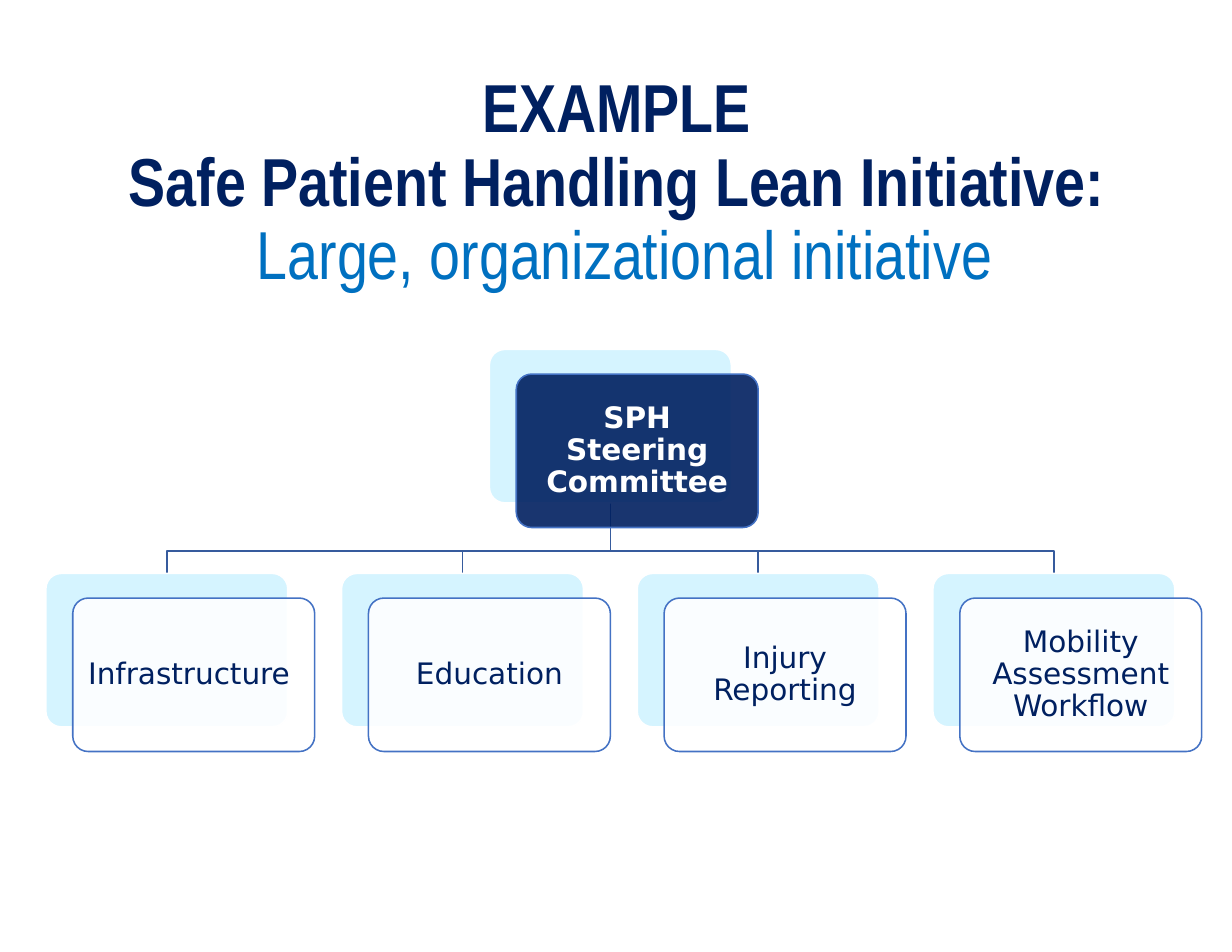
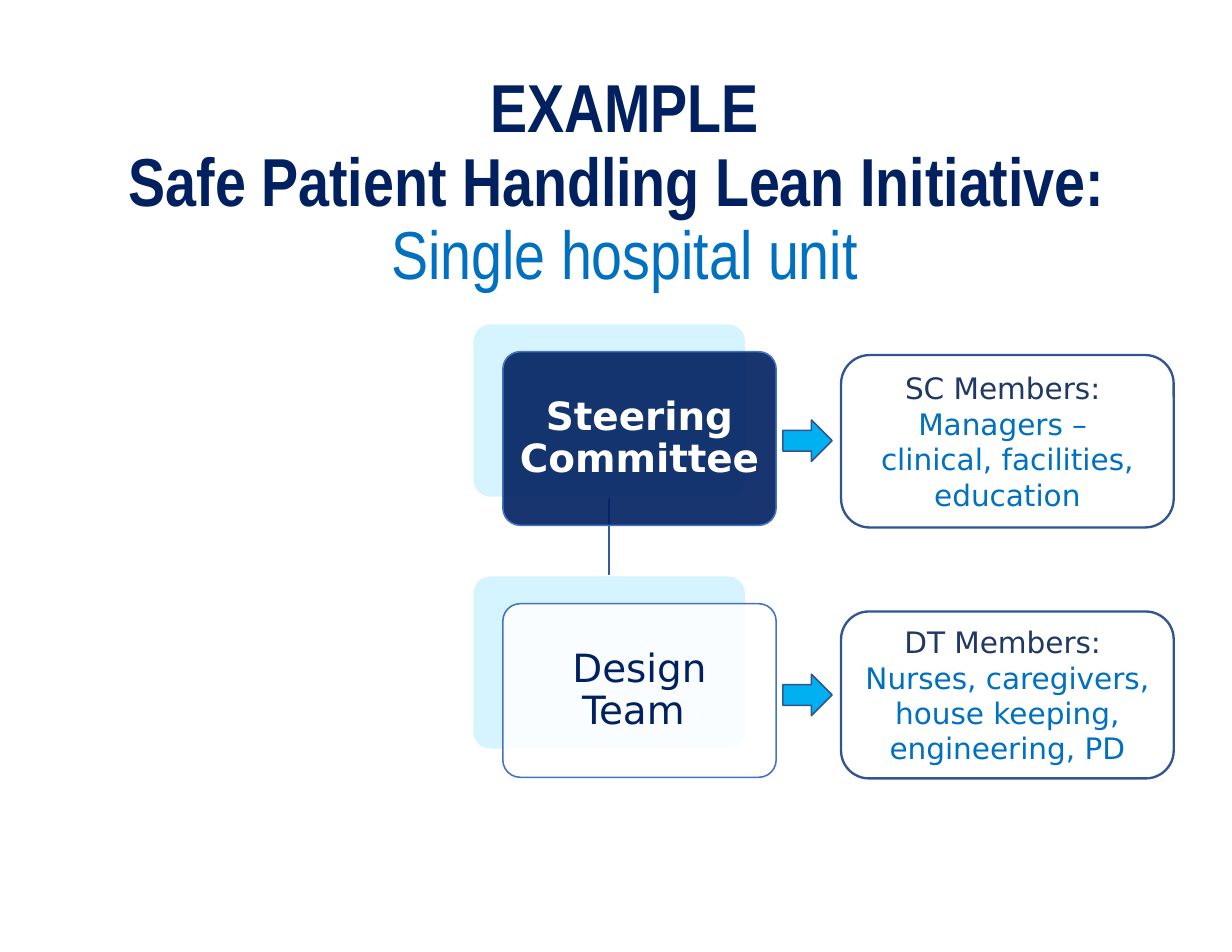
from copy import deepcopy

from lxml import etree
from pptx import Presentation
from pptx.dml.color import RGBColor
from pptx.enum.shapes import MSO_CONNECTOR, MSO_SHAPE
from pptx.enum.text import MSO_ANCHOR, MSO_AUTO_SIZE, PP_ALIGN
from pptx.oxml.ns import qn
from pptx.util import Inches, Pt

NAVY = RGBColor(0x00, 0x20, 0x60)
BLUE = RGBColor(0x00, 0x70, 0xC0)
SLATE = RGBColor(0x20, 0x38, 0x64)
PALE = RGBColor(0xD5, 0xF4, 0xFF)
SKY = RGBColor(0x00, 0xB0, 0xF0)
WHITE = RGBColor(0xFF, 0xFF, 0xFF)
CARD_EDGE = RGBColor(0x44, 0x72, 0xC4)
LINK = RGBColor(0x36, 0x5B, 0x9D)
OUTLINE = RGBColor(0x32, 0x54, 0x91)

TITLE_FONT = "Arial Narrow"
CHART_FONT = "DejaVu Sans"


def write(paragraph, text, size=19, color=NAVY, bold=False, font=CHART_FONT):
    """Add text to a paragraph; each newline becomes a line break of the same format."""
    run = None
    for index, line in enumerate(text.split("\n")):
        if index:
            paragraph.add_line_break()
            line_break = paragraph._p.findall(qn("a:br"))[-1]
            line_break.insert(0, deepcopy(run.font._element if hasattr(run.font, "_element")
                                          else run._r.find(qn("a:rPr"))))
        if line:
            run = paragraph.add_run()
            run.text = line
            run.font.size, run.font.bold, run.font.name = Pt(size), bold, font
            run.font.color.rgb = color


class OrgChart:
    """Holds the deck, the current slide and the style of its elements."""

    def __init__(self):
        self.deck = Presentation()
        self.deck.slide_width, self.deck.slide_height = Inches(11), Inches(8.5)
        self.slide = None

    def new_slide(self, heading, scope):
        self.slide = self.deck.slides.add_slide(self.deck.slide_layouts[5])
        title = self.slide.shapes.title
        title.left, title.top = Inches(0.83), Inches(0.68)
        title.width, title.height = Inches(9.49), Inches(1.93)
        frame = title.text_frame
        frame.auto_size = MSO_AUTO_SIZE.NONE
        frame.vertical_anchor = MSO_ANCHOR.MIDDLE
        paragraph = frame.paragraphs[0]
        paragraph.alignment, paragraph.line_spacing = PP_ALIGN.CENTER, 0.9
        write(paragraph, heading, size=43.6, bold=True, font=TITLE_FONT)
        write(paragraph, scope, size=43.6, color=BLUE, font=TITLE_FONT)

    def block(self, kind, left, top, width, height, fill=None, line=OUTLINE, weight=1):
        shape = self.slide.shapes.add_shape(
            kind, Inches(left), Inches(top), Inches(width), Inches(height))
        shape.shadow.inherit = False
        if fill is None:
            shape.fill.background()
        else:
            shape.fill.solid()
            shape.fill.fore_color.rgb = fill
        shape.line.color.rgb = line
        shape.line.width = Pt(weight)
        return shape

    def card(self, text, left, top, width, height, offset, size, inset, lead=False):
        """Draw a translucent card over a pale backing, and return the backing."""
        rounded = MSO_SHAPE.ROUNDED_RECTANGLE
        backing = self.block(rounded, left, top, width, height, PALE, WHITE)
        front = self.block(rounded, left + offset[0], top + offset[1], width, height,
                           NAVY if lead else WHITE, CARD_EDGE)
        backing.adjustments[0] = front.adjustments[0] = 0.1
        color = front.element.spPr.find(qn("a:solidFill"))[0]
        etree.SubElement(color, qn("a:alpha"), val="90000")
        frame = front.text_frame
        frame.word_wrap = True
        frame.vertical_anchor = MSO_ANCHOR.MIDDLE
        frame.margin_left = frame.margin_right = Inches(inset)
        frame.margin_top = frame.margin_bottom = Inches(inset)
        paragraph = frame.paragraphs[0]
        paragraph.alignment, paragraph.line_spacing = PP_ALIGN.CENTER, 0.9
        write(paragraph, text, size=size, color=WHITE if lead else NAVY, bold=lead)
        return backing

    def link(self, parent, child):
        """Join two backings by a line that runs behind the cards."""
        start_x = parent.left + parent.width // 2
        end_x = child.left + child.width // 2
        start_y = parent.top + parent.height
        if start_x == end_x:
            line = self.slide.shapes.add_connector(
                MSO_CONNECTOR.STRAIGHT, start_x, start_y, end_x, child.top)
            line.begin_connect(parent, 2)
            line.end_connect(child, 0)
            etree.SubElement(line.element.spPr, qn("a:effectLst"))
        else:
            fork_y = child.top - Inches(0.2)
            builder = self.slide.shapes.build_freeform(start_x, start_y)
            builder.add_line_segments(
                [(start_x, fork_y), (end_x, fork_y), (end_x, child.top)], close=False)
            line = builder.convert_to_shape()
            line.fill.background()
            line.shadow.inherit = False
        line.line.color.rgb = LINK
        line.line.width = Pt(1)
        parent.element.addprevious(line.element)

    def members(self, heading, roles, top, height):
        box = self.block(MSO_SHAPE.ROUNDED_RECTANGLE, 7.51, top, 2.97, height, weight=1.5)
        frame = box.text_frame
        frame.word_wrap = True
        frame.vertical_anchor = MSO_ANCHOR.MIDDLE
        for paragraph, text, color in ((frame.paragraphs[0], heading, SLATE),
                                       (frame.add_paragraph(), roles, BLUE)):
            paragraph.alignment = PP_ALIGN.CENTER
            write(paragraph, text, color=color)

    def arrow(self, top):
        self.block(MSO_SHAPE.RIGHT_ARROW, 6.99, top, 0.44, 0.37, SKY)


def organization_slide(chart):
    chart.new_slide("EXAMPLE \nSafe Patient Handling Lean Initiative: \n",
                    "Large, organizational initiative")
    look = dict(width=2.16, height=1.37, offset=(0.24, 0.22), size=19, inset=0.08)
    committee = chart.card("SPH Steering Committee", 4.37, 3.12, lead=True, **look)
    teams = ("Infrastructure ", "Education", "Injury Reporting",
             "Mobility Assessment Workflow")
    for column, team in enumerate(teams):
        chart.link(committee, chart.card(team, 0.41 + 2.64 * column, 5.12, **look))


def unit_slide(chart):
    chart.new_slide("EXAMPLE\nSafe Patient Handling Lean Initiative: \n",
                    "Single hospital unit")
    look = dict(left=4.22, width=2.44, height=1.55, offset=(0.27, 0.25), size=25, inset=0.1)
    committee = chart.card("Steering Committee", top=2.89, lead=True, **look)
    design_team = chart.card("Design Team ", top=5.14, **look)
    chart.link(committee, design_team)
    chart.members("SC Members: ", "Managers – \nclinical, facilities, education", 3.17, 1.54)
    chart.members("DT Members: ", "Nurses, caregivers, house keeping, engineering, PD",
                  5.46, 1.49)
    for top in (3.75, 6.02):
        chart.arrow(top)


def main():
    chart = OrgChart()
    organization_slide(chart)
    unit_slide(chart)
    chart.deck.save("out.pptx")


if __name__ == "__main__":
    main()
